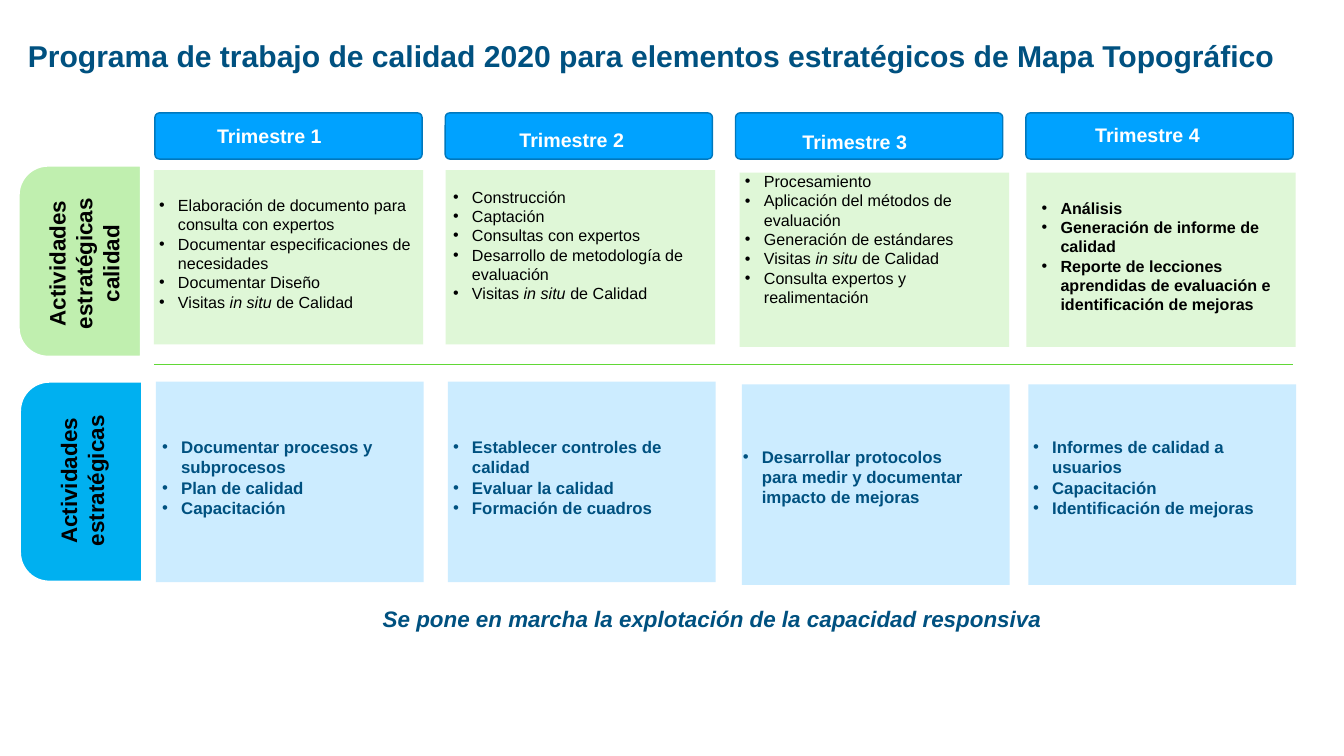
from dataclasses import dataclass

from lxml.etree import SubElement
from pptx import Presentation
from pptx.dml.color import RGBColor
from pptx.enum.shapes import MSO_CONNECTOR as Connector, MSO_SHAPE as Shape
from pptx.enum.text import MSO_ANCHOR as Anchor, PP_ALIGN as Align
from pptx.oxml.ns import qn
from pptx.util import Pt

EMU_PER_PX = 9525
BAND_OFFSET = (4, 403)


@dataclass(frozen=True)
class Theme:
    font: str = "Arial"
    navy: str = "005180"
    black: str = "000000"
    white: str = "FFFFFF"
    header: str = "00A2FF"
    header_edge: str = "0078BD"
    quality: str = "DFF7D7"
    quality_tab: str = "C0EFAF"
    strategy: str = "CCECFF"
    strategy_tab: str = "00B0F0"
    divider: str = "61D836"
    title_size: int = 43
    label_size: int = 32
    header_size: int = 28
    strategy_size: int = 24
    quality_size: int = 23


THEME = Theme()


@dataclass(frozen=True)
class Quarter:
    label_box: tuple
    card_corner: tuple
    quality_box: tuple
    quality_items: tuple
    strategy_box: tuple
    strategy_items: tuple
    quality_bold: bool = False


QUARTERS = (
    Quarter((406, 236, 214, 45), (293, 324),
            (297, 366, 500, 233),
            ("Elaboración de documento para consulta con expertos",
             "Documentar especificaciones de necesidades",
             "Documentar Diseño", "Visitas *in situ* de Calidad"),
            (303, 826, 503, 166),
            ("Documentar procesos y subprocesos", "Plan de calidad", "Capacitación")),
    Quarter((982, 243, 214, 45), (849, 324),
            (857, 350, 486, 233),
            ("Construcción", "Captación", "Consultas con expertos",
             "Desarrollo de metodología de evaluación", "Visitas* in situ *de Calidad"),
            (857, 826, 486, 166),
            ("Establecer controles de calidad", "Evaluar la calidad",
             "Formación de cuadros")),
    Quarter((1521, 248, 214, 45), (1409, 329),
            (1413, 320, 486, 271),
            ("Procesamiento", "Aplicación del métodos de evaluación",
             "Generación de estándares", "Visitas* in situ *de Calidad",
             "Consulta expertos y realimentación"),
            (1409, 845, 437, 127),
            ("Desarrollar protocolos para medir y documentar impacto de mejoras",)),
    Quarter((2084, 234, 203, 45), (1955, 329),
            (1978, 371, 486, 233),
            ("Análisis", "Generación de informe de calidad",
             "Reporte de lecciones aprendidas de evaluación e identificación de mejoras"),
            (1962, 826, 501, 166),
            ("Informes de calidad a usuarios", "Capacitación",
             "Identificación de mejoras"),
            quality_bold=True),
)


def px(length):
    return length * EMU_PER_PX


def emu(box):
    return [px(length) for length in box]


def color(value):
    return RGBColor.from_string(value)


def add_panel(slide, kind, box, fill, edge=None, edge_width=2):
    panel = slide.shapes.add_shape(kind, *emu(box))
    panel.shadow.inherit = False
    panel.fill.solid()
    panel.fill.fore_color.rgb = color(fill)
    if edge:
        panel.line.color.rgb = color(edge)
        panel.line.width = Pt(edge_width)
    else:
        panel.line.fill.background()
    return panel


def add_frame(slide, box, inset_x=6, inset_y=6):
    frame = slide.shapes.add_textbox(*emu(box)).text_frame
    frame.word_wrap = True
    frame.vertical_anchor = Anchor.MIDDLE
    frame.margin_left = frame.margin_right = px(inset_x)
    frame.margin_top = frame.margin_bottom = px(inset_y)
    return frame


def add_run(paragraph, text, size, tint, bold=True, italic=False):
    run = paragraph.add_run()
    run.text = text
    run.font.name = THEME.font
    run.font.size = Pt(size)
    run.font.bold = bold
    run.font.italic = italic
    run.font.color.rgb = color(tint)


def add_line_of_text(frame, text, size, tint, align=Align.LEFT, italic=False):
    paragraph = frame.paragraphs[0]
    paragraph.alignment = align
    add_run(paragraph, text, size, tint, italic=italic)
    return paragraph


def add_bullets(slide, box, items, size, tint, bold):
    frame = add_frame(slide, box)
    for index, item in enumerate(items):
        paragraph = frame.add_paragraph() if index else frame.paragraphs[0]
        properties = paragraph._p.get_or_add_pPr()
        properties.set("marL", str(px(36)))
        properties.set("indent", str(-px(36)))
        SubElement(properties, qn("a:buFont"), typeface=THEME.font)
        SubElement(properties, qn("a:buChar"), char="•")
        for part, text in enumerate(item.split("*")):
            add_run(paragraph, text, size, tint, bold, italic=part % 2 == 1)


def add_row_tab(slide, tab_box, fill, label_box, label):
    tab = add_panel(slide, Shape.ROUND_2_SAME_RECTANGLE, tab_box, fill, THEME.white, 3)
    tab.rotation = 270
    tab.adjustments[0] = 0.24
    tab.adjustments[1] = 0
    frame = add_frame(slide, label_box)
    frame._txBody.bodyPr.set("vert", "vert270")
    paragraph = add_line_of_text(frame, label, THEME.label_size, THEME.black, Align.CENTER)
    paragraph.space_after = Pt(12)


def add_divider(slide, left, right, y):
    divider = slide.shapes.add_connector(Connector.STRAIGHT, *emu((left, y, right, y)))
    divider.line.color.rgb = color(THEME.divider)
    divider.line.width = Pt(2)
    SubElement(divider._element.spPr, qn("a:effectLst"))


def add_quarter(slide, index, quarter):
    left, top = quarter.card_corner
    add_panel(slide, Shape.RECTANGLE, (left, top, 513, 332), THEME.quality)
    add_panel(slide, Shape.RECTANGLE,
              (left + BAND_OFFSET[0], top + BAND_OFFSET[1], 510, 382), THEME.strategy)
    header = add_panel(slide, Shape.ROUNDED_RECTANGLE, (295 + 553 * index, 215, 509, 88),
                       THEME.header, THEME.header_edge)
    header.adjustments[0] = 0.1
    add_line_of_text(add_frame(slide, quarter.label_box, 0, 0), f"Trimestre {index + 1}",
                     THEME.header_size, THEME.white, Align.CENTER)
    add_bullets(slide, quarter.quality_box, quarter.quality_items,
                THEME.quality_size, THEME.black, quarter.quality_bold)
    add_bullets(slide, quarter.strategy_box, quarter.strategy_items,
                THEME.strategy_size, THEME.navy, True)


def main():
    deck = Presentation()
    deck.slide_width, deck.slide_height = emu((2560, 1440))
    slide = deck.slides.add_slide(deck.slide_layouts[6])
    add_line_of_text(add_frame(slide, (43, 20, 2474, 172), 10, 5),
                     "Programa de trabajo de calidad 2020 para elementos estratégicos "
                     "de Mapa Topográfico", THEME.title_size, THEME.navy)
    for index, quarter in enumerate(QUARTERS):
        add_quarter(slide, index, quarter)
    add_row_tab(slide, (-30, 381, 364, 233), THEME.quality_tab,
                (68, 342, 182, 320), "Actividades estratégicas calidad")
    add_row_tab(slide, (-36, 801, 381, 233), THEME.strategy_tab,
                (90, 756, 131, 320), "Actividades estratégicas")
    add_divider(slide, 293, 2463, 694)
    add_line_of_text(add_frame(slide, (723, 1147, 1387, 62)),
                     "Se pone en marcha la explotación de la capacidad responsiva",
                     THEME.label_size, THEME.navy, italic=True)
    deck.save("out.pptx")


if __name__ == "__main__":
    main()
